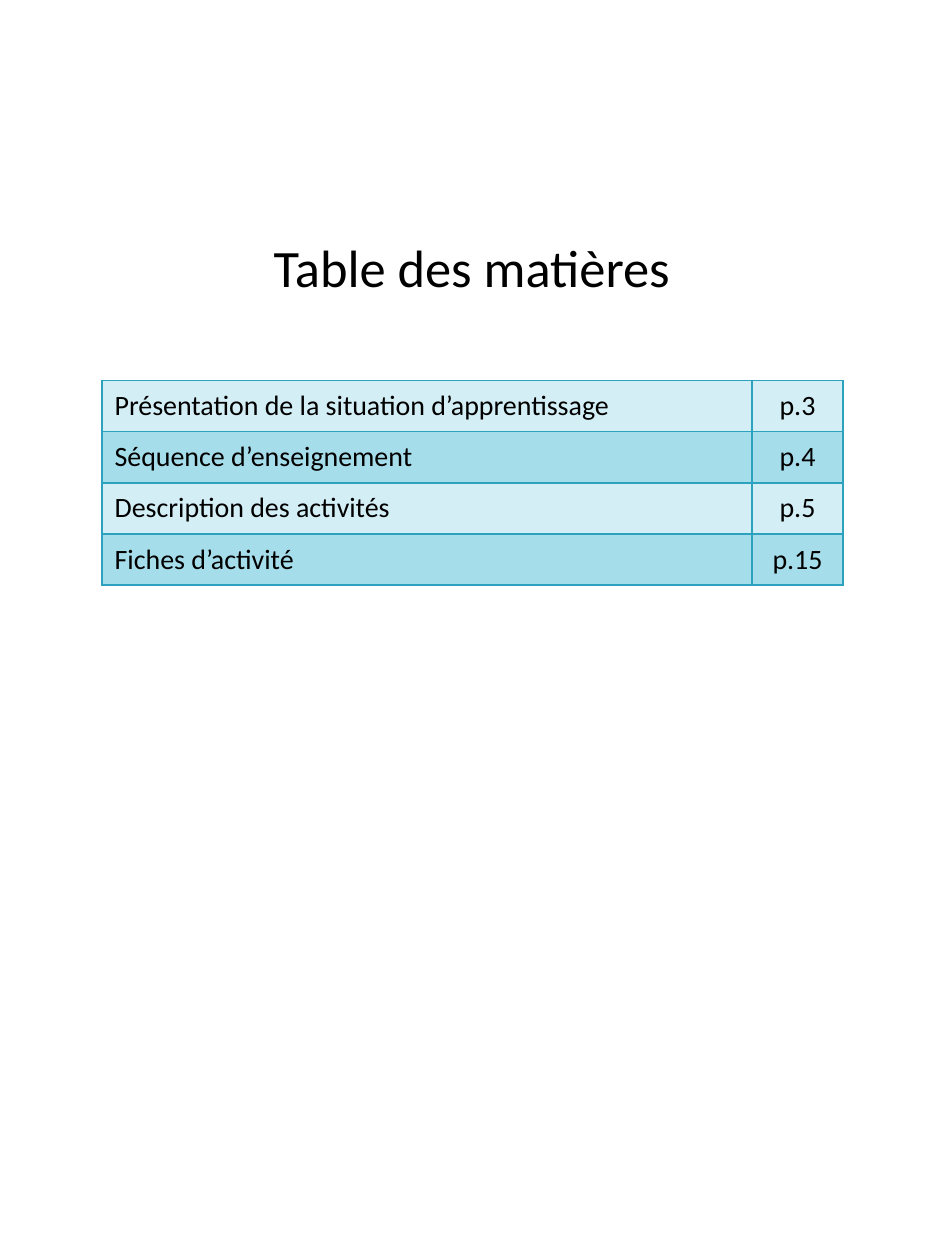
from lxml import etree
from pptx import Presentation
from pptx.dml.color import RGBColor
from pptx.enum.text import MSO_ANCHOR, PP_ALIGN
from pptx.oxml.ns import qn
from pptx.util import Inches, Pt

LEFT, CENTER = PP_ALIGN.LEFT, PP_ALIGN.CENTER
MIDDLE = MSO_ANCHOR.MIDDLE

FONT = "Calibri"
BLACK = "000000"
BORDER = "2DA2BF"
BANDS = ("D3EEF5", "A6DDEA")

COLUMN_WIDTHS = (5.16, 0.72)
ROW_HEIGHT = 0.406
CONTENTS = (
    ("Présentation de la situation d’apprentissage", "p.3"),
    ("Séquence d’enseignement", "p.4"),
    ("Description des activités", "p.5"),
    ("Fiches d’activité", "p.15"),
)


def color(hex_value):
    return RGBColor.from_string(hex_value)


def add_text(paragraph, text, size, alignment):
    paragraph.alignment = alignment
    run = paragraph.add_run()
    run.text = text
    run.font.name = FONT
    run.font.size = Pt(size)
    run.font.color.rgb = color(BLACK)


def add_title(slide, text, left, top, width, height):
    box = slide.shapes.add_textbox(
        Inches(left), Inches(top), Inches(width), Inches(height))
    frame = box.text_frame
    frame.word_wrap = True
    frame.vertical_anchor = MIDDLE
    add_text(frame.paragraphs[0], text, 30, CENTER)


def add_borders(cell):
    properties = cell._tc.get_or_add_tcPr()
    # Border lines come before the fill in the cell properties
    for index, side in enumerate(("a:lnL", "a:lnR", "a:lnT", "a:lnB")):
        line = etree.Element(qn(side), w=str(Pt(1)))
        fill = etree.SubElement(line, qn("a:solidFill"))
        etree.SubElement(fill, qn("a:srgbClr"), val=BORDER)
        properties.insert(index, line)


def add_contents_table(slide, left, top):
    table = slide.shapes.add_table(
        len(CONTENTS), len(COLUMN_WIDTHS), Inches(left), Inches(top),
        Inches(sum(COLUMN_WIDTHS)), Inches(ROW_HEIGHT * len(CONTENTS))).table
    for column, width in zip(table.columns, COLUMN_WIDTHS):
        column.width = Inches(width)

    for row_index, entry in enumerate(CONTENTS):
        table.rows[row_index].height = Inches(ROW_HEIGHT)
        for column_index, text in enumerate(entry):
            cell = table.cell(row_index, column_index)
            cell.vertical_anchor = MIDDLE
            cell.fill.solid()
            cell.fill.fore_color.rgb = color(BANDS[row_index % 2])
            add_borders(cell)
            alignment = CENTER if column_index else LEFT
            add_text(cell.text_frame.paragraphs[0], text, 16, alignment)


def main():
    presentation = Presentation()
    presentation.slide_width = Inches(7.5)
    presentation.slide_height = Inches(10)
    slide = presentation.slides.add_slide(presentation.slide_layouts[6])

    # Heading
    add_title(slide, "Table des matières", 1.41, 1.7, 4.67, 0.83)

    # Sections and page numbers
    add_contents_table(slide, 0.81, 3.02)

    presentation.save("out.pptx")


if __name__ == "__main__":
    main()
